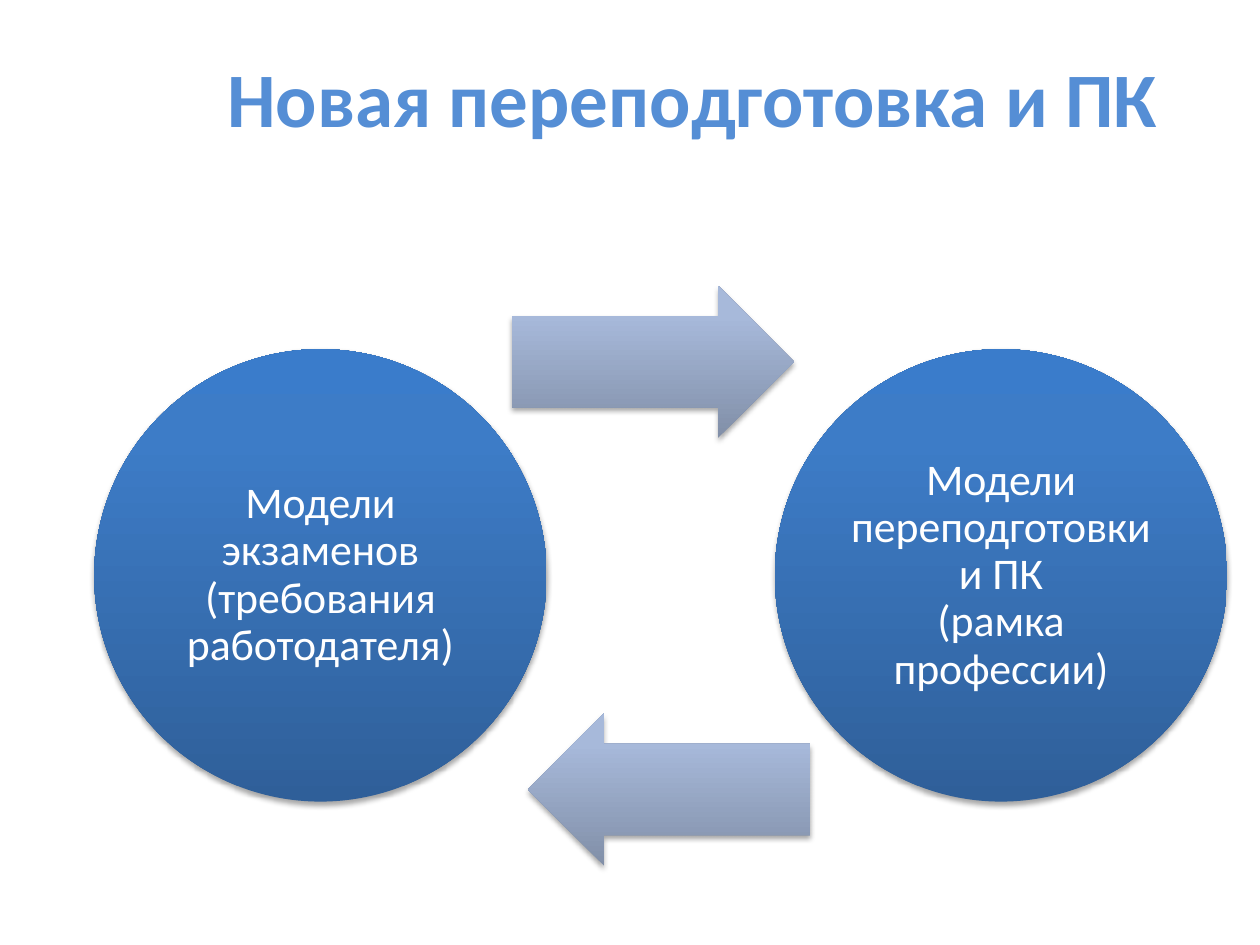
from lxml.etree import SubElement
from pptx import Presentation
from pptx.dml.color import RGBColor
from pptx.enum.shapes import MSO_SHAPE
from pptx.enum.text import MSO_ANCHOR, PP_ALIGN
from pptx.oxml.ns import qn
from pptx.util import Cm, Pt

# Content
TITLE = "Новая переподготовка и ПК"
DISCS = [  # left edge in cm, text
    (1.9, "Модели экзаменов (требования работодателя)"),
    (15.62, "Модели переподготовки и ПК\n(рамка профессии)"),
]
ARROWS = [(10.32, 5.76, 0), (10.64, 14.38, 180)]  # left, top in cm, turn

# Look
FONT = "Calibri"
BLUE = [(0, "2F5F99"), (80, "3D7CC7"), (100, "3A7CCB")]
PALE = [(0, "818FA8"), (80, "A7B9DA"), (100, "A7BADC")]
DISC_TOP, DISC_SIZE = 7.04, 9.12
ARROW_W, ARROW_H = 5.69, 3.07


def color(code):
    return RGBColor.from_string(code)


def add(parent, tag, **attrs):
    return SubElement(parent, qn(tag), {k: str(v) for k, v in attrs.items()})


def shade(shape, stops):
    """Upward gradient, no outline, soft shadow below."""
    shape.fill.gradient()
    shape.line.fill.background()
    shape.shadow.inherit = False
    props = shape.element.spPr

    grad = props.find(qn("a:gradFill"))
    for child in list(grad):
        grad.remove(child)
    grad.set("rotWithShape", "0")
    group = add(grad, "a:gsLst")
    for pos, code in stops:
        add(add(group, "a:gs", pos=pos * 1000), "a:srgbClr", val=code)
    add(grad, "a:lin", ang=270 * 60000, scaled=0)

    cast = add(props.find(qn("a:effectLst")), "a:outerShdw", blurRad=Pt(3.1),
               dist=Pt(1.8), dir=90 * 60000, rotWithShape=0)
    add(add(cast, "a:srgbClr", val="000000"), "a:alpha", val=35000)


def write(frame, text, size, code, space, bold=False):
    frame.word_wrap = True
    frame.vertical_anchor = MSO_ANCHOR.MIDDLE
    para = frame.paragraphs[0]
    para.text = text
    para.alignment = PP_ALIGN.CENTER
    para.line_spacing = space
    for run in para.runs:
        font = run.font
        font.name, font.size, font.bold = FONT, Pt(size), bold
        font.color.rgb = color(code)


def main():
    deck = Presentation()
    deck.slide_width, deck.slide_height = Cm(25.4), Cm(19.05)
    slide = deck.slides.add_slide(deck.slide_layouts[5])
    shapes = slide.shapes

    # Title
    title = shapes.title
    title.left, title.top = Cm(2.54), Cm(0.53)
    title.width, title.height = Cm(22.86), Cm(3.18)
    write(title.text_frame, TITLE, 44, "558ED5", 0.8, bold=True)

    # Cycle: each disc is followed by the arrow that leaves it
    for (x, text), (left, top, turn) in zip(DISCS, ARROWS):
        disc = shapes.add_shape(MSO_SHAPE.OVAL, Cm(x), Cm(DISC_TOP),
                                Cm(DISC_SIZE), Cm(DISC_SIZE))
        shade(disc, BLUE)
        frame = disc.text_frame
        frame.margin_left = frame.margin_right = Cm(0.08)
        frame.margin_top = frame.margin_bottom = Cm(0.08)
        write(frame, text, 25, "FFFFFF", 0.9)

        arrow = shapes.add_shape(MSO_SHAPE.RIGHT_ARROW, Cm(left), Cm(top),
                                 Cm(ARROW_W), Cm(ARROW_H))
        arrow.adjustments[0], arrow.adjustments[1] = 0.6, 0.5
        arrow.rotation = turn
        shade(arrow, PALE)

    deck.save("out.pptx")


if __name__ == "__main__":
    main()
